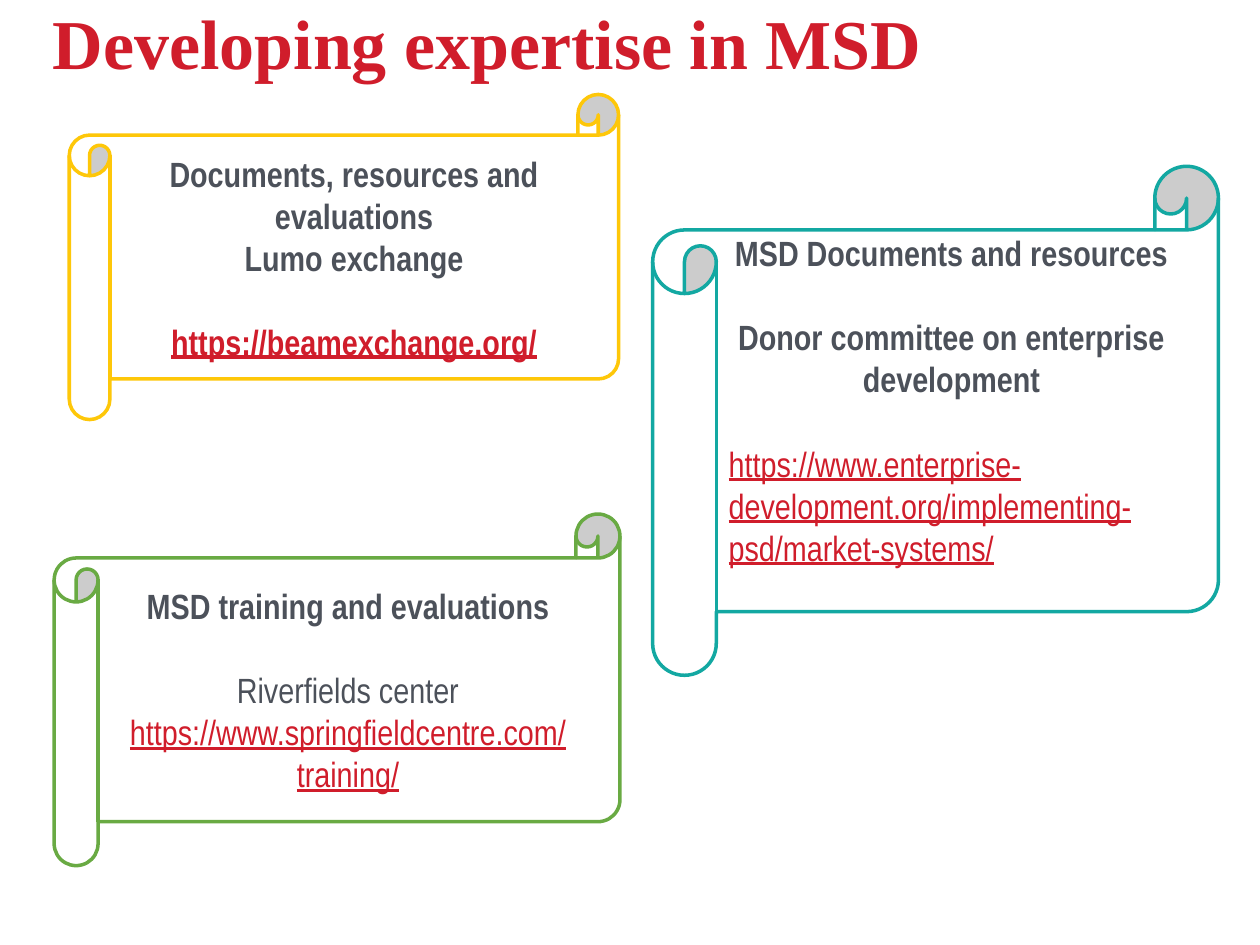
from pptx import Presentation
from pptx.dml.color import RGBColor
from pptx.enum.shapes import MSO_SHAPE
from pptx.enum.text import MSO_ANCHOR, PP_ALIGN
from pptx.util import Inches, Pt

SCROLL = MSO_SHAPE.HORIZONTAL_SCROLL
MIDDLE, BOTTOM = MSO_ANCHOR.MIDDLE, MSO_ANCHOR.BOTTOM
LEFT, CENTER = PP_ALIGN.LEFT, PP_ALIGN.CENTER

COLORS = {
    "red": "D01D2B",
    "grey": "4C515A",
    "white": "FFFFFF",
    "yellow": "FEC709",
    "green": "69AA43",
    "teal": "13A8A2",
}
LINE_GAP = 24  # height of one text line, in points


def rgb(name):
    return RGBColor.from_string(COLORS[name])


class ResourceSlide:
    title_font = "Times New Roman"
    body_font = "Arial Narrow"

    def __init__(self, presentation):
        self.slide = presentation.slides.add_slide(presentation.slide_layouts[6])

    def set_font(self, paragraph, name, size, color, bold, underline=None):
        font = paragraph.font
        font.name, font.size, font.bold = name, Pt(size), bold
        font.underline = underline
        font.color.rgb = rgb(color)

    def title(self, text, box):
        frame = self.slide.shapes.add_textbox(*map(Inches, box)).text_frame
        frame.word_wrap = True
        frame.vertical_anchor = BOTTOM
        frame.margin_left = frame.margin_right = 0
        frame.margin_top = frame.margin_bottom = 0
        heading = frame.paragraphs[0]
        heading.text = text
        heading.line_spacing = 0.8
        self.set_font(heading, self.title_font, 40, "red", True)

    def scroll(self, box, outline, entries, bottom_margin=0.05):
        """Draw a scroll; each entry is (text, bold, gap before, alignment)."""
        scroll = self.slide.shapes.add_shape(SCROLL, *map(Inches, box))
        scroll.shadow.inherit = False
        scroll.fill.solid()
        scroll.fill.fore_color.rgb = rgb("white")
        scroll.line.color.rgb = rgb(outline)
        scroll.line.width = Pt(2)
        frame = scroll.text_frame
        frame.word_wrap = True
        frame.vertical_anchor = MIDDLE
        frame.margin_bottom = Inches(bottom_margin)
        for index, (text, bold, gap, alignment) in enumerate(entries):
            entry = frame.add_paragraph() if index else frame.paragraphs[0]
            entry.text = text
            entry.alignment = alignment
            if gap:
                entry.space_before = Pt(gap)
            is_address = text.startswith("https://")
            self.set_font(entry, self.body_font, 20,
                          "red" if is_address else "grey", bold, is_address)


def main():
    presentation = Presentation()
    presentation.slide_width = Inches(10)
    presentation.slide_height = Inches(7.5)

    page = ResourceSlide(presentation)
    page.title("Developing expertise in MSD", (0.42, 0.1, 9, 0.56))
    page.scroll((0.55, 0.75, 4.36, 2.58), "yellow", [
        ("Documents, resources and evaluations", True, 0, CENTER),
        ("Lumo exchange", True, 0, CENTER),
        ("https://beamexchange.org/", True, LINE_GAP, CENTER),
    ])
    page.scroll((0.43, 4.08, 4.49, 2.79), "green", [
        ("MSD training and evaluations", True, 0, CENTER),
        ("Riverfields center", False, LINE_GAP, CENTER),
        ("https://www.springfieldcentre.com/training/", False, 0, CENTER),
    ])
    page.scroll((5.18, 1.32, 4.49, 4.04), "teal", [
        ("MSD Documents and resources", True, 0, CENTER),
        ("Donor committee on enterprise development", True, LINE_GAP, CENTER),
        ("https://www.enterprise-development.org/implementing-psd/market-systems/",
         False, LINE_GAP, LEFT),
    ], bottom_margin=0.38)

    presentation.save("out.pptx")


if __name__ == "__main__":
    main()
